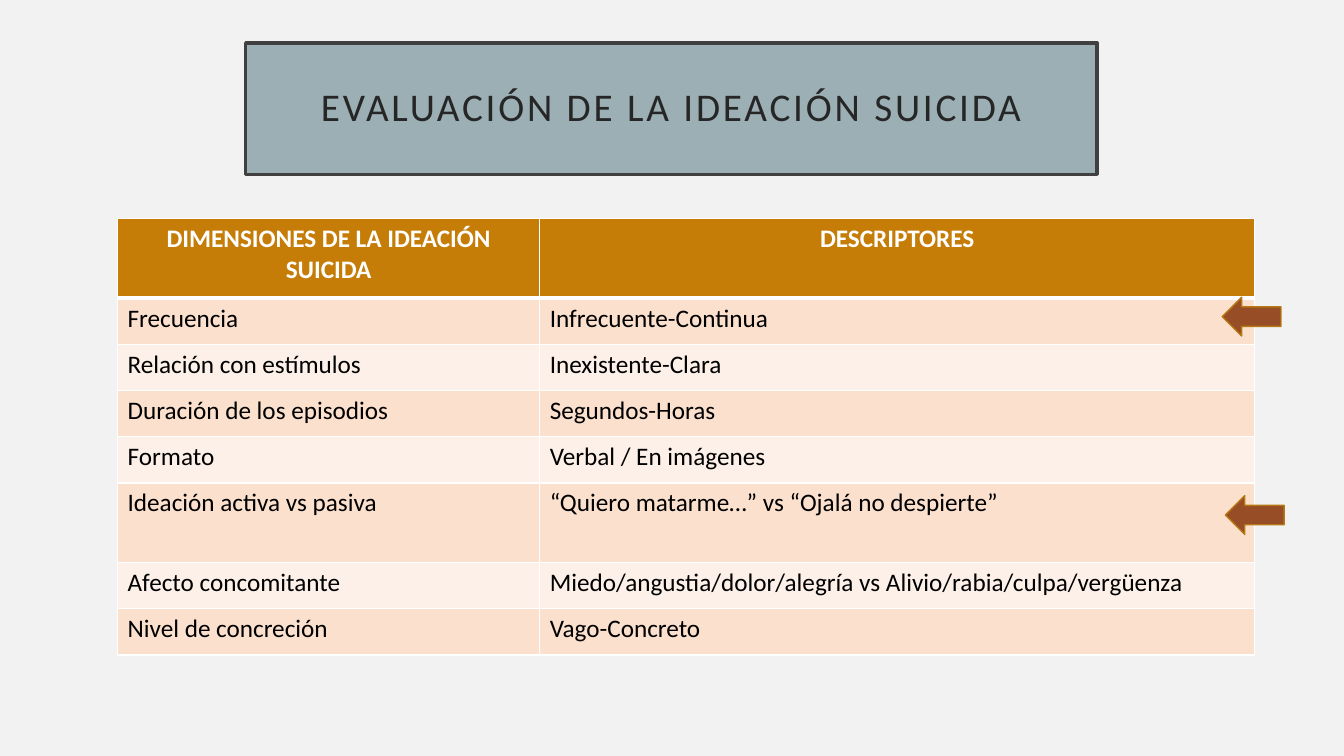
from lxml import etree
from pptx import Presentation
from pptx import util as u
from pptx.dml.color import RGBColor
from pptx.enum import shapes, text
from pptx.oxml import ns

PX = 9525  # EMU per px, 96 px to the inch
COLORS = {
    "background": "F2F2F2", "title": "9BAFB5", "frame": "404040", "ink": "262626",
    "header": "C67D08", "odd": "FBE0CD", "even": "FDF0E8",
    "arrow": "974D25", "arrow_line": "B67815", "black": "000000", "white": "FFFFFF",
}
ROWS = [
    ("DIMENSIONES DE LA IDEACIÓN SUICIDA", "DESCRIPTORES"),
    ("Frecuencia", "Infrecuente-Continua"),
    ("Relación con estímulos", "Inexistente-Clara"),
    ("Duración de los episodios", "Segundos-Horas"),
    ("Formato", "Verbal / En imágenes"),
    ("Ideación activa vs pasiva", "“Quiero matarme…” vs “Ojalá no despierte”"),
    ("Afecto concomitante", "Miedo/angustia/dolor/alegría vs Alivio/rabia/culpa/vergüenza"),
    ("Nivel de concreción", "Vago-Concreto"),
]
COLUMN_WIDTHS = [402, 681]
ROW_HEIGHT, TALL_ROW_HEIGHT = 44, 76
TALL_ROWS = {0, 5}


def color(name):
    return RGBColor.from_string(COLORS[name])


class SlideBuilder:
    def __init__(self, deck, font):
        self.font = font
        self.page = deck.slides.add_slide(deck.slide_layouts[6])
        self.fill(self.page.background, "background")

    def fill(self, target, name):
        target.fill.solid()
        target.fill.fore_color.rgb = color(name)

    def add_span(self, para, words, size, ink, bold=False, centered=False):
        para.alignment = text.PP_ALIGN.CENTER if centered else text.PP_ALIGN.LEFT
        span = para.add_run()
        span.text = words
        span.font.name = self.font
        span.font.size = u.Pt(size)
        span.font.bold = bold
        span.font.color.rgb = color(ink)
        return span

    def shape(self, kind, left, top, width, height, fill, line, weight):
        box = self.page.shapes.add_shape(kind, *(n * PX for n in (left, top, width, height)))
        box.shadow.inherit = False
        self.fill(box, fill)
        box.line.color.rgb = color(line)
        box.line.width = u.Pt(weight)
        return box

    def title(self, words, left, top, width, height):
        box = self.shape(shapes.MSO_SHAPE.RECTANGLE, left, top, width, height,
                         "title", "frame", 2.5)
        frame = box.text_frame
        frame.word_wrap = True
        frame.vertical_anchor = text.MSO_ANCHOR.MIDDLE
        frame.margin_left = frame.margin_right = u.Inches(0.2)
        frame.margin_top = frame.margin_bottom = u.Inches(0.2)
        frame.paragraphs[0].line_spacing = 0.9
        span = self.add_span(frame.paragraphs[0], words, 28, "ink", centered=True)
        span.font._element.set("spc", "200")

    def arrow(self, left, top):
        box = self.shape(shapes.MSO_SHAPE.RIGHT_ARROW, left, top, 56, 37,
                         "arrow", "arrow_line", 1)
        box.rotation = 180

    def borders(self, cell, weights):
        properties = cell._tc.get_or_add_tcPr()
        for index, (side, weight) in enumerate(weights.items()):
            line = etree.Element(ns.qn(f"a:ln{side}"), w=str(u.Pt(weight)))
            solid = etree.SubElement(line, ns.qn("a:solidFill"))
            etree.SubElement(solid, ns.qn("a:srgbClr"), val=COLORS["white"])
            properties.insert(index, line)

    def table(self, rows, left, top, widths, heights):
        frame = self.page.shapes.add_table(
            len(rows), len(widths), left * PX, top * PX, sum(widths) * PX, sum(heights) * PX)
        grid = frame.table
        for column, width in zip(grid.columns, widths):
            column.width = width * PX
        for r, (row, height) in enumerate(zip(rows, heights)):
            grid.rows[r].height = height * PX
            header = r == 0
            for c, words in enumerate(row):
                cell = grid.cell(r, c)
                self.fill(cell, "header" if header else "odd" if r % 2 else "even")
                self.borders(cell, {"L": 1, "R": 1, "T": 3 if r == 1 else 1,
                                    "B": 3 if header else 1})
                self.add_span(cell.text_frame.paragraphs[0], words, 18,
                              "white" if header else "black", bold=header, centered=header)


def main():
    deck = Presentation()
    deck.slide_width, deck.slide_height = 1280 * PX, 720 * PX
    slide = SlideBuilder(deck, "Calibri")

    # Title
    slide.title("EVALUACIÓN DE LA IDEACIÓN SUICIDA", 234, 41, 811, 125)

    # Dimensions and their descriptors
    heights = [TALL_ROW_HEIGHT if r in TALL_ROWS else ROW_HEIGHT for r in range(len(ROWS))]
    slide.table(ROWS, 112, 208, COLUMN_WIDTHS, heights)

    # Arrows pointing at the key rows
    for left, top in [(1167, 472), (1164, 283)]:
        slide.arrow(left, top)

    deck.save("out.pptx")


if __name__ == "__main__":
    main()
